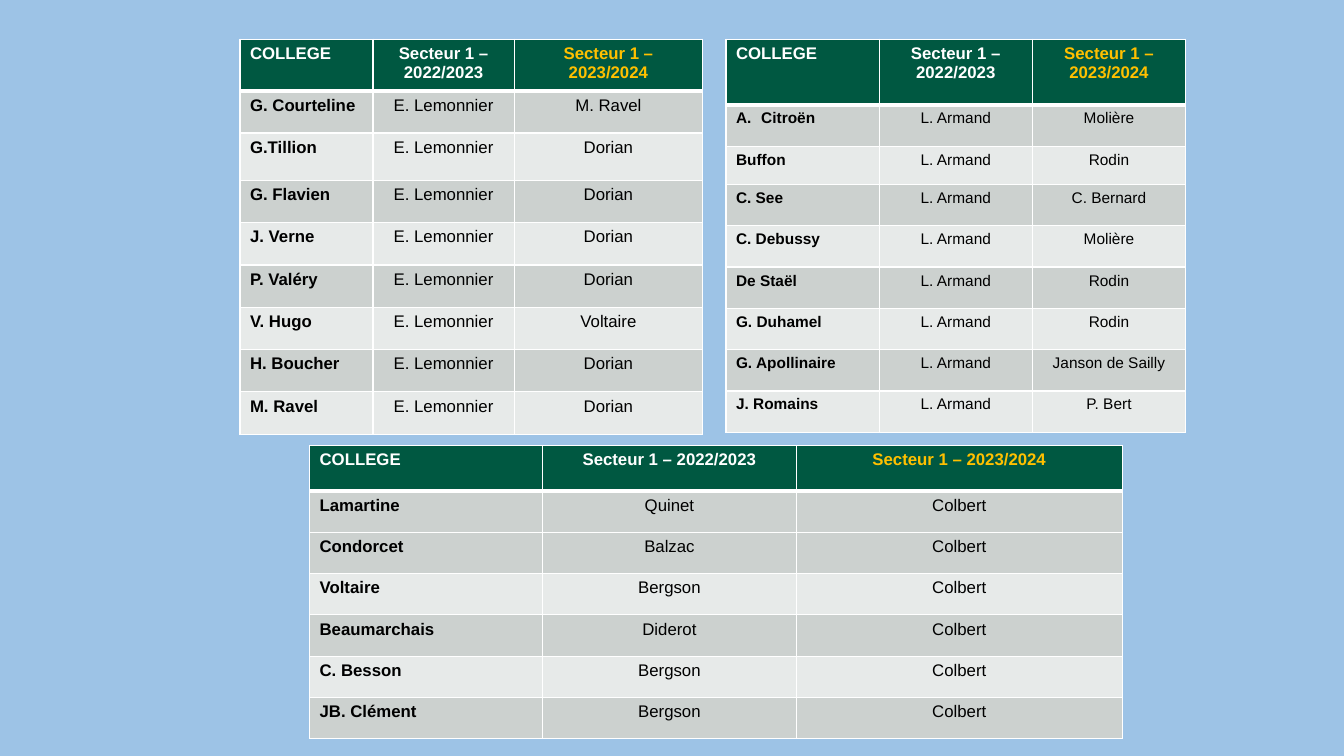
from lxml import etree
from pptx import Presentation
from pptx.dml.color import RGBColor
from pptx.enum import text
from pptx.oxml.ns import qn
from pptx.util import Inches, Pt

COLORS = {"background": "9DC3E6", "header": "005841", "dark": "CCD1CF", "light": "E7EAE9",
          "white": "FFFFFF", "gold": "FFC000", "black": "000000"}
HEADER = ("COLLEGE", "Secteur 1 – 2022/2023", "Secteur 1 – 2023/2024")
HEADER_COLORS = ("white", "white", "gold")

# In "bands", d is a dark row and l a light one.
TABLES = [
    {"at": (2.38, 0.39), "cols": (1.32, 1.4, 1.87), "size": 12, "bands": "dldldldl",
     "heights": [0.51, 0.42, 0.47] + [0.42] * 6,
     "rows": [
         ("G. Courteline", "E. Lemonnier", "M. Ravel"),
         ("G.Tillion", "E. Lemonnier", "Dorian"),
         ("G. Flavien", "E. Lemonnier", "Dorian"),
         ("J. Verne", "E. Lemonnier", "Dorian"),
         ("P. Valéry", "E. Lemonnier", "Dorian"),
         ("V. Hugo", "E. Lemonnier", "Voltaire"),
         ("H. Boucher", "E. Lemonnier", "Dorian"),
         ("M. Ravel", "E. Lemonnier", "Dorian")]},
    {"at": (7.2, 0.39), "cols": (1.52, 1.52, 1.52), "size": 11, "bands": "dldldldl",
     "heights": [0.65, 0.41, 0.38] + [0.41] * 6, "numbered": "Citroën",
     "rows": [
         ("Citroën", "L. Armand", "Molière"),
         ("Buffon", "L. Armand", "Rodin"),
         ("C. See", "L. Armand", "C. Bernard"),
         ("C. Debussy", "L. Armand", "Molière"),
         ("De Staël", "L. Armand", "Rodin"),
         ("G. Duhamel", "L. Armand", "Rodin"),
         ("G. Apollinaire", "L. Armand", "Janson de Sailly"),
         ("J. Romains", "L. Armand", "P. Bert")]},
    {"at": (3.07, 4.42), "cols": (2.31, 2.52, 3.23), "size": 12, "bands": "ddldld",
     "heights": [0.45] + [0.41] * 6,
     "rows": [
         ("Lamartine", "Quinet", "Colbert"),
         ("Condorcet", "Balzac", "Colbert"),
         ("Voltaire", "Bergson", "Colbert"),
         ("Beaumarchais", "Diderot", "Colbert"),
         ("C. Besson", "Bergson", "Colbert"),
         ("JB. Clément", "Bergson", "Colbert")]},
]


def rgb(name):
    return RGBColor.from_string(COLORS[name])


def set_borders(cell, row):
    """White 1 pt borders, 3 pt between the header and the first row."""
    thick = {0: "lnB", 1: "lnT"}.get(row)
    tcPr = cell._tc.get_or_add_tcPr()
    for side in ("lnL", "lnR", "lnT", "lnB"):
        ln = etree.SubElement(tcPr, qn("a:" + side), w=str(Pt(3 if side == thick else 1)))
        fill = etree.SubElement(ln, qn("a:solidFill"))
        etree.SubElement(fill, qn("a:srgbClr"), val=COLORS["white"])


def number_with_letter(p):
    pPr = p._p.get_or_add_pPr()
    pPr.set("marL", str(Inches(0.25)))
    pPr.set("indent", str(Inches(-0.25)))
    etree.SubElement(pPr, qn("a:buFont"), typeface="+mj-lt")
    etree.SubElement(pPr, qn("a:buAutoNum"), type="alphaUcPeriod")


def fill_cell(cell, row, col, label, data):
    set_borders(cell, row)
    is_header = row == 0
    band = "header" if is_header else {"d": "dark", "l": "light"}[data["bands"][row - 1]]
    cell.fill.solid()
    cell.fill.fore_color.rgb = rgb(band)
    p = cell.text_frame.paragraphs[0]
    p.text = label
    p.alignment = text.PP_ALIGN.CENTER if col else text.PP_ALIGN.LEFT
    if label == data.get("numbered"):
        number_with_letter(p)
    font = p.runs[0].font
    font.name = "Arial"
    font.size = Pt(12 if is_header else data["size"])
    font.bold = is_header or col == 0
    font.color.rgb = rgb(HEADER_COLORS[col] if is_header else "black")


def add_sector_table(s, data):
    rows = [HEADER] + data["rows"]
    left, top = data["at"]
    tbl = s.shapes.add_table(len(rows), len(HEADER), Inches(left), Inches(top),
                             Inches(sum(data["cols"])), Inches(sum(data["heights"]))).table
    tbl.horz_banding = False
    for column, width in zip(tbl.columns, data["cols"]):
        column.width = Inches(width)
    for r, labels in enumerate(rows):
        tbl.rows[r].height = Inches(data["heights"][r])
        for c, label in enumerate(labels):
            fill_cell(tbl.cell(r, c), r, c, label, data)


def main():
    prs = Presentation()
    prs.slide_width, prs.slide_height = Inches(13.33), Inches(7.5)
    s = prs.slides.add_slide(prs.slide_layouts[6])
    s.background.fill.solid()
    s.background.fill.fore_color.rgb = rgb("background")
    for data in TABLES:
        add_sector_table(s, data)
    prs.save("out.pptx")


if __name__ == "__main__":
    main()
